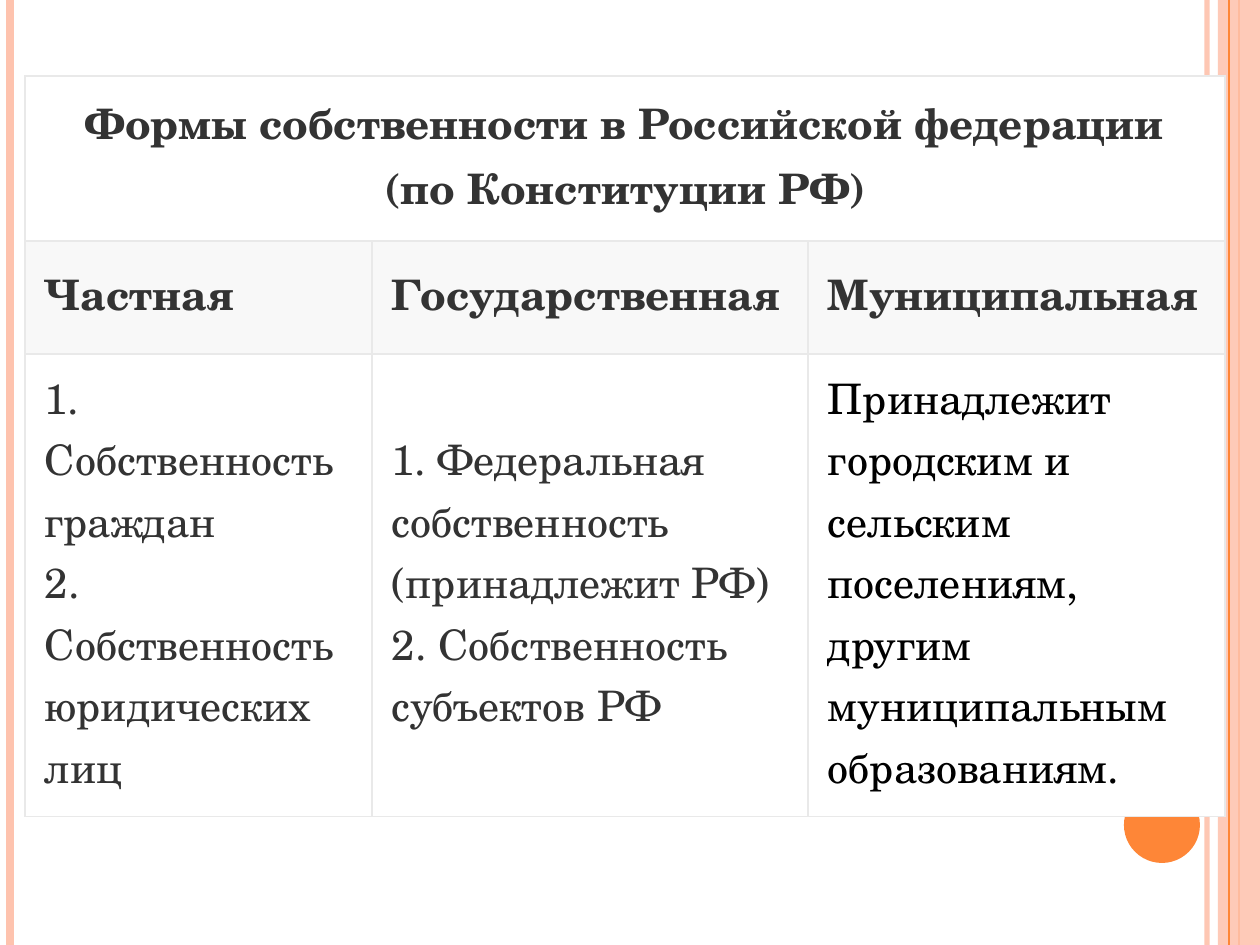
"""Build a slide with a table of the forms of property in the Russian Federation."""
from dataclasses import dataclass

import pptx
import pptx.dml.color
import pptx.enum.shapes
import pptx.enum.text
import pptx.oxml
import pptx.oxml.ns
import pptx.util
from lxml import etree

SCALE = 914400 / 126
WIDTH, HEIGHT = 1260, 945
FONT = "TeX Gyre Schola"
COLORS = {
    "peach": "FEC3AE", "orange": "FE8637", "border": "E9E9E9", "white": "FFFFFF",
    "band": "F8F8F8", "text": "333333", "black": "000000",
}
COLUMNS = (347, 436, 417)
ROWS = (165, 113, 463)
CELL_FORMAT = {
    "margin_left": 20, "margin_top": 13, "margin_right": 20, "margin_bottom": 20,
}


@dataclass
class Stripe:
    x: int
    weight: float
    color: str
    opacity: int = 100


@dataclass
class Panel:
    kind: pptx.enum.shapes.MSO_SHAPE
    x: int
    y: int
    width: int
    height: int
    color: str
    opacity: int = 100


@dataclass
class Entry:
    row: int
    column: int
    paragraphs: tuple[str, ...]
    fill: str = "white"
    color: str = "text"
    bold: bool = False
    centered: bool = False
    spacing: float = 35.1


DECORATIONS = (
    Stripe(1207, 3, "peach", 93),
    Stripe(10, 4.5, "peach"),
    Stripe(1239, 1.5, "orange"),
    Panel(pptx.enum.shapes.MSO_SHAPE.RECTANGLE, 1218, 0, 42, HEIGHT, "peach", 87),
    Stripe(1229, 0.75, "orange"),
    Panel(pptx.enum.shapes.MSO_SHAPE.OVAL, 1124, 787, 76, 76, "orange"),
)
ENTRIES = (
    Entry(0, 0, ("Формы собственности в Российской федерации (по Конституции РФ)",),
          bold=True, centered=True, spacing=37),
    Entry(1, 0, ("Частная ",), "band", bold=True, spacing=37),
    Entry(1, 1, ("Государственная",), "band", bold=True, spacing=37),
    Entry(1, 2, ("Муниципальная",), "band", bold=True, spacing=37),
    Entry(2, 0, ("1. Собственность граждан", "2. Собственность юридических лиц ")),
    Entry(2, 1, ("1. Федеральная собственность (принадлежит РФ)",
                 "2. Собственность субъектов РФ")),
    Entry(2, 2, ("Принадлежит городским и сельским поселениям, "
                 "другим муниципальным образованиям.",), color="black"),
)


def px(length: int) -> int:
    return round(length * SCALE)


def rgb(name: str) -> pptx.dml.color.RGBColor:
    return pptx.dml.color.RGBColor.from_string(COLORS[name])


def paint(fill, color: str, opacity: int = 100) -> None:
    fill.solid()
    fill.fore_color.rgb = rgb(color)
    if opacity < 100:
        tint = fill._xPr.find(".//" + pptx.oxml.ns.qn("a:srgbClr"))
        alpha = etree.SubElement(tint, pptx.oxml.ns.qn("a:alpha"))
        alpha.set("val", str(opacity * 1000))


def draw_stripe(page, stripe: Stripe) -> None:
    line = page.shapes.add_connector(
        pptx.enum.shapes.MSO_CONNECTOR.STRAIGHT, px(stripe.x), 0, px(stripe.x), px(HEIGHT))
    line.line.width = pptx.util.Pt(stripe.weight)
    paint(line.line.fill, stripe.color, stripe.opacity)
    etree.SubElement(line._element.spPr, pptx.oxml.ns.qn("a:effectLst"))


def draw_panel(page, panel: Panel) -> None:
    shape = page.shapes.add_shape(
        panel.kind, px(panel.x), px(panel.y), px(panel.width), px(panel.height))
    shape.shadow.inherit = False
    shape.line.fill.background()
    paint(shape.fill, panel.color, panel.opacity)


def add_borders(cell) -> None:
    properties = cell._tc.get_or_add_tcPr()
    for side in ("lnL", "lnR", "lnT", "lnB"):
        properties.append(pptx.oxml.parse_xml(
            f'<a:{side} {pptx.oxml.ns.nsdecls("a")} w="9525"><a:solidFill>'
            f'<a:srgbClr val="{COLORS["border"]}"/></a:solidFill></a:{side}>'))


def fill_cell(table, entry: Entry) -> None:
    cell = table.cell(entry.row, entry.column)
    for name, value in CELL_FORMAT.items():
        setattr(cell, name, px(value))
    cell.vertical_anchor = pptx.enum.text.MSO_ANCHOR.MIDDLE
    paint(cell.fill, entry.fill)
    align = pptx.enum.text.PP_ALIGN
    font_format = {"name": FONT, "size": pptx.util.Pt(24), "bold": entry.bold}
    for index, text in enumerate(entry.paragraphs):
        frame = cell.text_frame
        para = frame.add_paragraph() if index else frame.paragraphs[0]
        para.alignment = align.CENTER if entry.centered else align.LEFT
        para.line_spacing = pptx.util.Pt(entry.spacing)
        span = para.add_run()
        span.text = text
        for name, value in font_format.items():
            setattr(span.font, name, value)
        span.font.color.rgb = rgb(entry.color)


def draw_table(page) -> None:
    table = page.shapes.add_table(
        len(ROWS), len(COLUMNS), px(25), px(76), px(sum(COLUMNS)), px(sum(ROWS))).table
    for column, width in zip(table.columns, COLUMNS):
        column.width = px(width)
    for row, height in zip(table.rows, ROWS):
        row.height = px(height)
    for cell in table.iter_cells():
        add_borders(cell)
    table.cell(0, 0).merge(table.cell(0, len(COLUMNS) - 1))
    for entry in ENTRIES:
        fill_cell(table, entry)


def main() -> None:
    deck = pptx.Presentation()
    deck.slide_width, deck.slide_height = px(WIDTH), px(HEIGHT)
    page = deck.slides.add_slide(deck.slide_layouts[6])
    for item in DECORATIONS:
        if isinstance(item, Stripe):
            draw_stripe(page, item)
        else:
            draw_panel(page, item)
    draw_table(page)
    deck.save("out.pptx")


if __name__ == "__main__":
    main()
